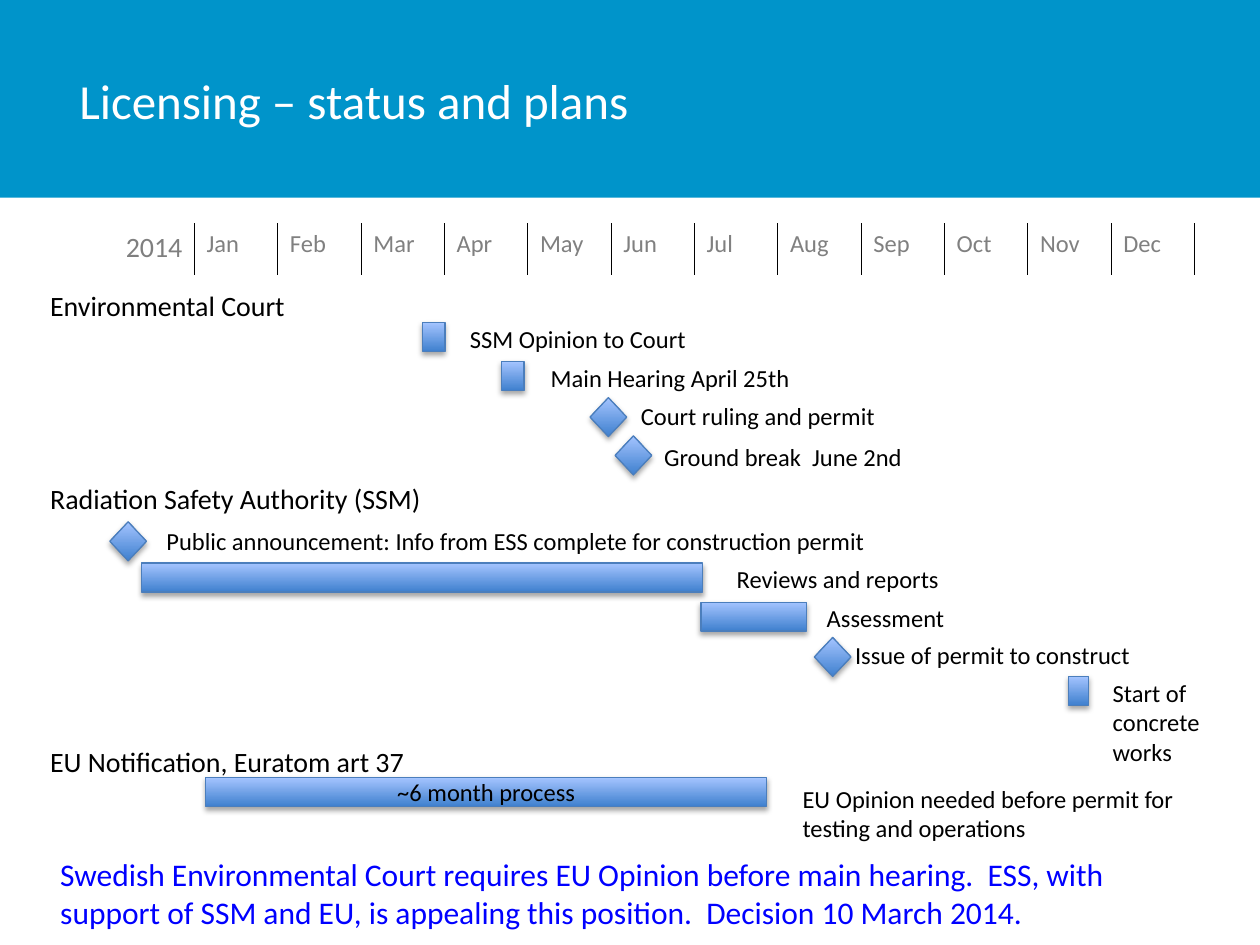
from lxml.etree import SubElement
from pptx import Presentation
from pptx.dml.color import RGBColor
from pptx.enum.shapes import MSO_SHAPE
from pptx.enum.text import MSO_ANCHOR, MSO_AUTO_SIZE, PP_ALIGN
from pptx.oxml import parse_xml
from pptx.oxml.ns import nsdecls, qn
from pptx.util import Inches, Pt

COLORS = {
    "band": "0094CA", "title": "FFFFFF", "month": "808080", "year": "7F7F7F",
    "ink": "000000", "note": "0000FF", "bar_low": "3F80CE", "bar_high": "A4C4FF",
    "bar_line": "4B7EBC",
}
COLORS = {name: RGBColor.from_string(value) for name, value in COLORS.items()}
AXIS_LEFT, MONTH = 1.54, 7.94 / 12
FIRST_ROW, ROW = 2.675, 0.31
LABEL_HEIGHT = 0.34


def write(frame, text, size, color, alignment=PP_ALIGN.LEFT):
    paragraph = frame.paragraphs[0]
    paragraph.alignment = alignment
    for index, line in enumerate(text.split("\n")):
        if index:
            paragraph.add_line_break()
        run = paragraph.add_run()
        run.text = line
        run.font.size = Pt(size)
        run.font.name = "Calibri"
        run.font.color.rgb = COLORS[color]


def add_text(left, top, width, height, text, size, color):
    box = slide.shapes.add_textbox(*map(Inches, (left, top, width, height)))
    box.text_frame.word_wrap = True
    box.text_frame.auto_size = MSO_AUTO_SIZE.SHAPE_TO_FIT_TEXT
    write(box.text_frame, text, size, color)


presentation = Presentation()
presentation.slide_width = Inches(10)
presentation.slide_height = Inches(7.5)
slide = presentation.slides.add_slide(presentation.slide_layouts[5])

band = slide.shapes.add_shape(MSO_SHAPE.RECTANGLE, 0, 0, presentation.slide_width, Inches(1.57))
band.shadow.inherit = False
band.fill.solid()
band.fill.fore_color.rgb = COLORS["band"]
band.line.fill.background()
slide.shapes._spTree.insert(2, band._element)

title = slide.shapes.title
title.left, title.top, title.width, title.height = map(Inches, (0.63, 0, 6.64, 1.58))
frame = title.text_frame
frame.margin_left = frame.margin_right = frame.margin_top = frame.margin_bottom = 0
frame.vertical_anchor = MSO_ANCHOR.MIDDLE
frame.auto_size = MSO_AUTO_SIZE.NONE
write(frame, "Licensing – status and plans", 28, "title")

months = "Jan Feb Mar Apr May Jun Jul Aug Sep Oct Nov Dec".split()
table = slide.shapes.add_table(
    1, len(months), Inches(AXIS_LEFT), Inches(1.77), Inches(MONTH * len(months)), Inches(0.41)
).table
table.first_row = table.horz_banding = False
for cell, month in zip(table.rows[0].cells, months):
    write(cell.text_frame, month, 14, "month")
    cell.fill.background()
    properties = cell._tc.get_or_add_tcPr()
    for index, side in enumerate(("lnL", "lnR", "lnT", "lnB")):
        border = SubElement(properties, qn(f"a:{side}"), w=str(Pt(0.25)))
        if side in ("lnL", "lnR"):
            fill = SubElement(border, qn("a:solidFill"))
            SubElement(fill, qn("a:srgbClr"), val=str(COLORS["ink"]))
        else:
            SubElement(border, qn("a:noFill"))
        properties.insert(index, border)

add_text(0.9, 1.77, 0.87, 0.37, "2014", 16, "year")

headings = [
    (2.24, "Environmental Court"),
    (3.77, "Radiation Safety Authority (SSM)"),
    (5.86, "EU Notification, Euratom art 37"),
]
for top, text in headings:
    add_text(0.3, top, 3.87, 0.37, text, 16, "ink")

BAR, DIAMOND = (MSO_SHAPE.RECTANGLE, 0.23), (MSO_SHAPE.DIAMOND, 0.31)
marks = [
    (BAR, 2.74, 0, 0.27, ""),
    (BAR, 3.69, 1, 0.27, ""),
    (DIAMOND, 4.75, 2.05, 0.44, ""),
    (DIAMOND, 5.05, 3.03, 0.44, ""),
    (DIAMOND, -1.01, 5.23, 0.44, ""),
    (BAR, -0.63, 6.16, 6.73, ""),
    (BAR, 6.08, 7.16, 1.27, ""),
    (DIAMOND, 7.44, 8.19, 0.44, ""),
    (BAR, 10.49, 9.06, 0.24, ""),
    (BAR, 0.14, 11.65, 6.73, "~6 month process"),
]
for (kind, height), start, row, length, text in marks:
    mark = slide.shapes.add_shape(
        kind, Inches(AXIS_LEFT + start * MONTH), Inches(FIRST_ROW + row * ROW - height / 2),
        Inches(length * MONTH), Inches(height),
    )
    mark.fill.gradient()
    mark.fill.gradient_angle = 90
    for stop, color in zip(mark.fill.gradient_stops, ("bar_low", "bar_high")):
        stop.color.rgb = COLORS[color]
    mark.line.color.rgb = COLORS["bar_line"]
    mark.line.width = Pt(0.75)
    mark._element.spPr.append(parse_xml(
        f'<a:effectLst {nsdecls("a")}><a:outerShdw blurRad="{Pt(3.1)}" dist="{Pt(1.8)}" '
        'dir="5400000" rotWithShape="0"><a:srgbClr val="000000"><a:alpha val="35000"/>'
        "</a:srgbClr></a:outerShdw></a:effectLst>"
    ))
    if text:
        mark.text_frame.vertical_anchor = MSO_ANCHOR.MIDDLE
        write(mark.text_frame, text, 14, "ink", PP_ALIGN.CENTER)

labels = [
    (3.16, 0.05, 4.19, 1, "SSM Opinion to Court"),
    (4.13, 1.05, 4.19, 1, "Main Hearing April 25th"),
    (5.21, 2.02, 4.19, 1, "Court ruling and permit"),
    (5.49, 3.08, 4.19, 1, "Ground break  June 2nd"),
    (-0.48, 5.24, 10.34, 1, "Public announcement: Info from ESS complete for construction permit"),
    (6.36, 6.21, 5.64, 1, "Reviews and reports"),
    (7.44, 7.21, 5.05, 1, "Assessment"),
    (7.78, 8.15, 4.19, 1, "Issue of permit to construct"),
    (10.87, 9.11, 1.92, 3, "Start of concrete works"),
    (7.15, 11.82, 5.64, 2, "EU Opinion needed before permit for\ntesting and operations"),
]
for start, row, length, lines, text in labels:
    add_text(
        AXIS_LEFT + start * MONTH, FIRST_ROW + row * ROW - LABEL_HEIGHT / 2,
        length * MONTH, LABEL_HEIGHT + (lines - 1) * 0.24, text, 14, "ink",
    )

add_text(
    0.38, 6.74, 9.1, 0.71,
    "Swedish Environmental Court requires EU Opinion before main hearing.  ESS, with support "
    "of SSM and EU, is appealing this position.  Decision 10 March 2014.",
    18, "note",
)

presentation.save("out.pptx")
